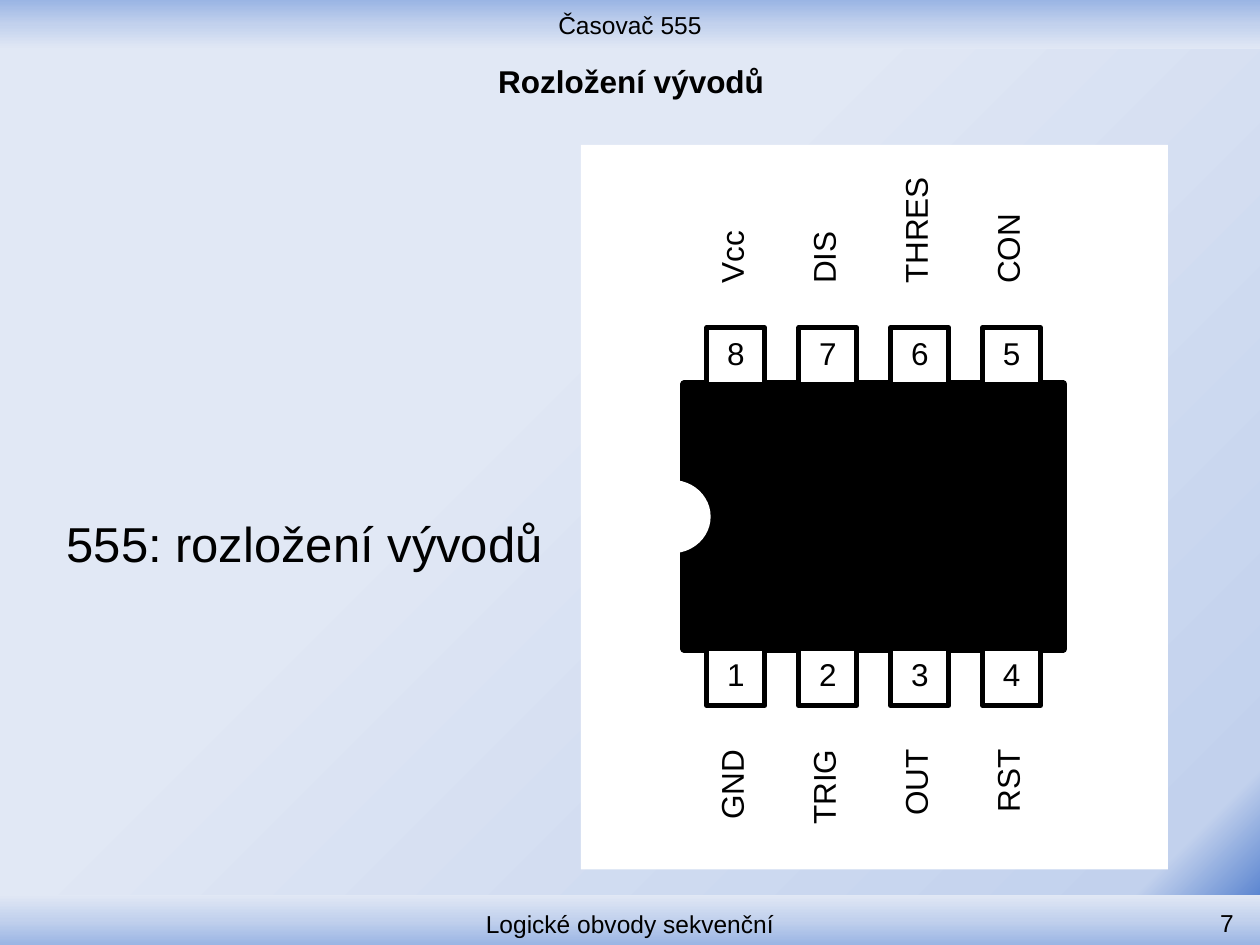
from copy import deepcopy
from dataclasses import dataclass

from pptx import Presentation
from pptx.dml.color import RGBColor
from pptx.enum.shapes import MSO_SHAPE
from pptx.enum.text import MSO_ANCHOR, PP_ALIGN
from pptx.oxml.ns import qn
from pptx.util import Inches, Pt


@dataclass(frozen=True)
class Theme:
    font: str = "Arial"
    black: str = "000000"
    white: str = "FFFFFF"
    pale: str = "E1E8F5"
    soft: str = "C2D1ED"
    mid: str = "9AB5E4"
    deep: str = "3468C5"
    small: int = 14
    body: int = 18
    large: int = 28


class Deck:
    """Holds the theme and the slide being drawn."""

    def __init__(self, slide, theme):
        self.slide = slide
        self.theme = theme

    def letter(self, shape, text, size, align=PP_ALIGN.LEFT,
               anchor=MSO_ANCHOR.TOP, bold=False):
        """Put one styled paragraph into a shape."""
        frame = shape.text_frame
        frame.word_wrap = True
        frame.vertical_anchor = anchor
        para = frame.paragraphs[0]
        para.text = text
        para.alignment = align
        font = para.font
        font.name = self.theme.font
        font.size = Pt(size)
        font.bold = bold
        font.color.rgb = RGBColor.from_string(self.theme.black)

    def blend(self, fill, element, stops, angle):
        """Fill with any number of (percent, colour) stops; angle is counter-clockwise."""
        fill.gradient()
        fill.gradient_angle = angle
        group = next(element.iter(qn("a:gsLst")))
        while len(group) < len(stops):
            group.append(deepcopy(group[0]))
        for stop, (place, color) in zip(fill.gradient_stops, stops):
            stop.position = place / 100
            stop.color.rgb = RGBColor.from_string(color)

    def back(self, stops, angle):
        self.blend(self.slide.background.fill, self.slide.element, stops, angle)

    def title(self, text, box):
        shape = self.slide.shapes.title
        shape.left, shape.top, shape.width, shape.height = map(Inches, box)
        self.letter(shape, text, self.theme.body, PP_ALIGN.CENTER,
                    MSO_ANCHOR.MIDDLE, bold=True)

    def shape(self, box, color=None, line=None, width=0, kind=MSO_SHAPE.RECTANGLE):
        shape = self.slide.shapes.add_shape(kind, *map(Inches, box))
        shape.shadow.inherit = False
        if color:
            shape.fill.solid()
            shape.fill.fore_color.rgb = RGBColor.from_string(color)
        if line:
            shape.line.color.rgb = RGBColor.from_string(line)
            shape.line.width = Pt(width)
        else:
            shape.line.fill.background()
        return shape

    def band(self, text, box, angle, anchor):
        theme = self.theme
        shape = self.shape(box)
        stops = [(0, theme.mid), (50, theme.soft), (100, theme.pale)]
        self.blend(shape.fill, shape.element, stops, angle)
        self.letter(shape, text, theme.small, PP_ALIGN.CENTER, anchor)

    def text(self, text, box, size, align=PP_ALIGN.LEFT,
             anchor=MSO_ANCHOR.TOP, turn=0):
        shape = self.slide.shapes.add_textbox(*map(Inches, box))
        shape.rotation = turn
        self.letter(shape, text, size, align, anchor)

    def pin(self, number, mid, top):
        wide, high = 0.46, 0.45
        shape = self.shape((mid - wide / 2, top, wide, high),
                           self.theme.white, self.theme.black, 2.75)
        self.letter(shape, number, self.theme.body, PP_ALIGN.CENTER)

    def label(self, text, mid, center, length, align):
        """Place upward-reading text centred on the point (mid, center)."""
        high = 0.47
        box = (mid - length / 2, center - high / 2, length, high)
        self.text(text, box, self.theme.body, align, turn=270)


def chip(deck):
    theme = deck.theme
    deck.shape((4.61, 1.15, 4.66, 5.75), theme.white)
    deck.shape((5.43, 3.05, 3.01, 2.1), theme.black, theme.black, 4.33)
    deck.shape((5.06, 3.84, 0.55, 0.52), theme.white, theme.white, 4.33,
               MSO_SHAPE.OVAL)

    upper = ["Vcc", "DIS", "THRES", "CON"]
    lower = ["GND", "TRIG", "OUT", "RST"]
    first, pitch = 5.84, 0.73
    over, under = 2.35, 5.85
    for i, (high, low) in enumerate(zip(upper, lower)):
        mid = first + i * pitch
        deck.pin(str(8 - i), mid, 2.6)
        deck.pin(str(i + 1), mid, 5.15)
        span = 1.2 if len(high) > 4 else 1.05
        deck.label(high, mid, over - span / 2, span, PP_ALIGN.LEFT)
        deck.label(low, mid, under + 1.05 / 2, 1.05, PP_ALIGN.RIGHT)


def main():
    show = Presentation()
    show.slide_width, show.slide_height = Inches(10), Inches(7.5)
    theme = Theme()
    deck = Deck(show.slides.add_slide(show.slide_layouts[5]), theme)
    deck.back([(0, theme.pale), (40, theme.pale), (92, theme.soft),
               (100, theme.deep)], 315)
    deck.band("Časovač 555", (0, 0, 10, 0.39), 270, MSO_ANCHOR.MIDDLE)
    deck.band("Logické obvody sekvenční", (0, 7.1, 10, 0.4), 90, MSO_ANCHOR.BOTTOM)
    deck.text("7", (9.33, 7.09, 0.56, 0.4), theme.small,
              PP_ALIGN.RIGHT, MSO_ANCHOR.BOTTOM)
    deck.title("Rozložení vývodů", (0.51, 0.44, 9, 0.4))
    deck.text("555: rozložení vývodů", (0.43, 4.03, 4.41, 0.57), theme.large)
    chip(deck)
    show.save("out.pptx")


if __name__ == "__main__":
    main()
